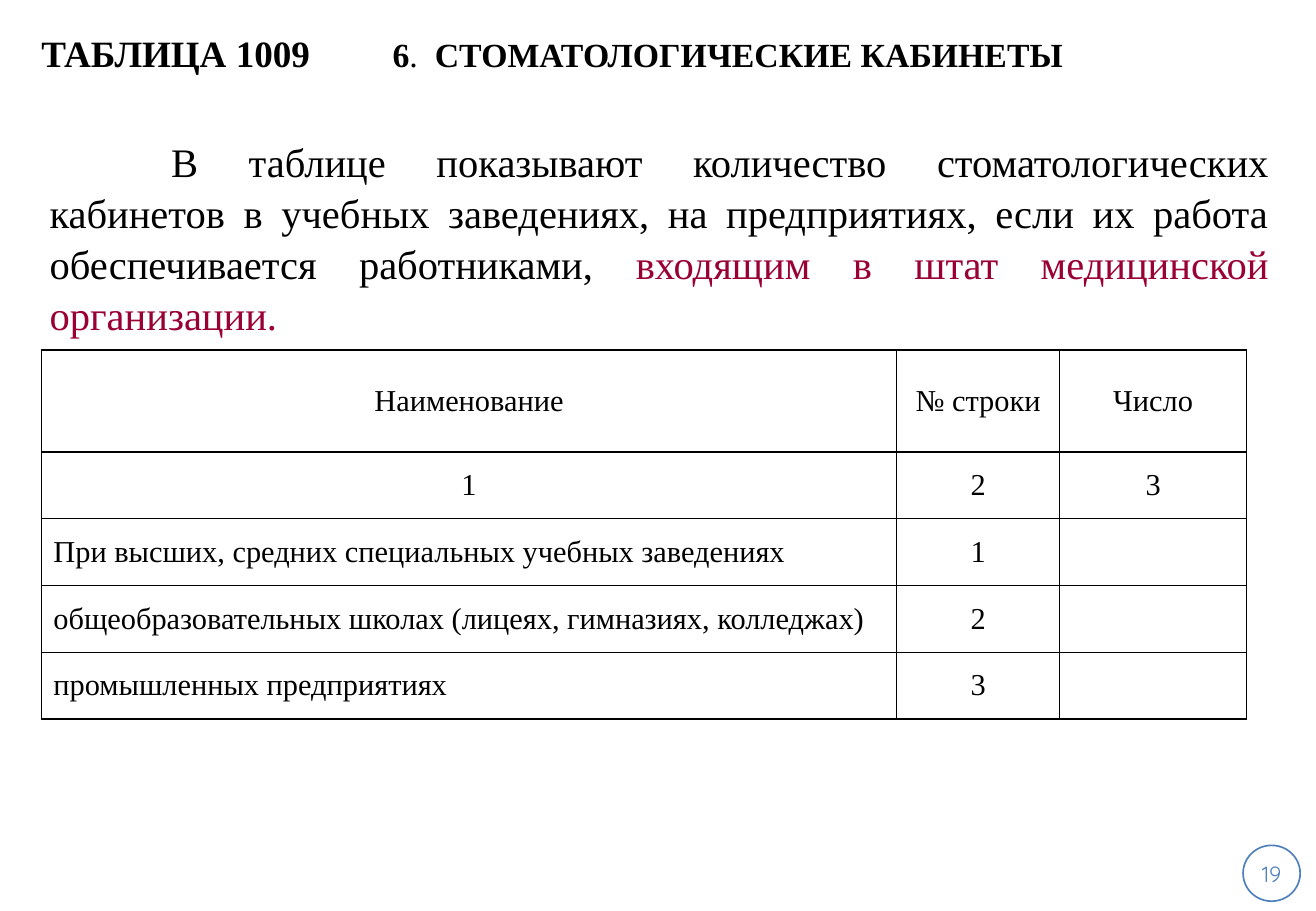
from dataclasses import dataclass

from lxml.etree import SubElement
from pptx import Presentation
from pptx.dml.color import RGBColor
from pptx.enum.shapes import MSO_SHAPE
from pptx.enum.text import MSO_ANCHOR, PP_ALIGN
from pptx.oxml.ns import qn
from pptx.util import Inches, Pt


@dataclass(frozen=True)
class Theme:
    font: str = "Times New Roman"
    number_font: str = "Quicksand"
    ink: RGBColor = RGBColor(0, 0, 0)
    accent: RGBColor = RGBColor(0x99, 0x00, 0x33)
    blue: RGBColor = RGBColor(0x4F, 0x81, 0xBD)
    title: Pt = Pt(22)
    subtitle: Pt = Pt(20)
    body: Pt = Pt(24)
    cell: Pt = Pt(18)
    number: Pt = Pt(13)
    line: Pt = Pt(1)


THEME = Theme()

COLUMNS = [7.04, 1.34, 1.54]
ROWS = [0.84, 0.55, 0.55, 0.55, 0.55]
CELLS = [
    ["Наименование", "№ строки", "Число"],
    ["1", "2", "3"],
    ["При высших, средних специальных учебных заведениях", "1", ""],
    ["общеобразовательных школах (лицеях, гимназиях, колледжах)", "2", ""],
    ["промышленных предприятиях", "3", ""],
]


def style(p, size, color=THEME.ink, name=THEME.font):
    p.font.name = name
    p.font.size = size
    p.font.color.rgb = color


def add_run(p, text):
    r = p.add_run()
    r.text = text
    return r


def add_text_box(slide, box):
    tf = slide.shapes.add_textbox(*map(Inches, box)).text_frame
    tf.word_wrap = True
    return tf


def add_title(slide, box):
    tf = add_text_box(slide, box)
    tf.margin_left = 0
    tf.vertical_anchor = MSO_ANCHOR.MIDDLE
    p = tf.paragraphs[0]
    # Tab stop separating the table number from the section name
    tabs = SubElement(p._p.get_or_add_pPr(), qn("a:tabLst"))
    SubElement(tabs, qn("a:tab"), pos=str(Inches(2.89)), algn="l")
    style(p, THEME.title)
    for text, size, bold in [
        ("ТАБЛИЦА 1009\t", THEME.title, True),
        ("6", THEME.subtitle, True),
        (".  ", THEME.subtitle, False),
        ("СТОМАТОЛОГИЧЕСКИЕ КАБИНЕТЫ", THEME.subtitle, True),
    ]:
        r = add_run(p, text)
        r.font.size = size
        r.font.bold = bold


def add_explanation(slide, box):
    p = add_text_box(slide, box).paragraphs[0]
    p.alignment = PP_ALIGN.JUSTIFY
    p.line_spacing = 1.05
    p._p.get_or_add_pPr().set("indent", str(Inches(1)))
    style(p, THEME.body)
    add_run(p, "В таблице показывают количество стоматологических кабинетов "
               "в учебных заведениях, на предприятиях, если их работа "
               "обеспечивается работниками, ")
    r = add_run(p, "входящим в штат медицинской организации.")
    r.font.color.rgb = THEME.accent


def add_borders(cell):
    tcPr = cell._tc.get_or_add_tcPr()
    for side in ("lnL", "lnR", "lnT", "lnB"):
        ln = SubElement(tcPr, qn(f"a:{side}"), w=str(THEME.line))
        fill = SubElement(ln, qn("a:solidFill"))
        SubElement(fill, qn("a:srgbClr"), val=str(THEME.ink))


def add_offices_table(slide, box):
    table = slide.shapes.add_table(len(ROWS), len(COLUMNS), *map(Inches, box)).table
    table.first_row = table.horz_banding = False
    for column, width in zip(table.columns, COLUMNS):
        column.width = Inches(width)
    for i, (row, height) in enumerate(zip(table.rows, ROWS)):
        row.height = Inches(height)
        for j, cell in enumerate(row.cells):
            cell.text = CELLS[i][j]
            cell.vertical_anchor = MSO_ANCHOR.MIDDLE
            p = cell.text_frame.paragraphs[0]
            # Only the names below the two header rows are left-aligned
            p.alignment = PP_ALIGN.LEFT if i > 1 and j == 0 else PP_ALIGN.CENTER
            style(p, THEME.cell)
            add_borders(cell)
            cell.fill.background()


def add_page_number(slide, box, number):
    s = slide.shapes.add_shape(MSO_SHAPE.OVAL, *map(Inches, box))
    s.shadow.inherit = False
    s.fill.background()
    s.line.color.rgb = THEME.blue
    s.line.width = THEME.line
    tf = s.text_frame
    tf.margin_left = tf.margin_right = tf.margin_top = tf.margin_bottom = 0
    tf.vertical_anchor = MSO_ANCHOR.MIDDLE
    p = tf.paragraphs[0]
    p.alignment = PP_ALIGN.CENTER
    add_run(p, number)
    style(p, THEME.number, THEME.blue, THEME.number_font)


def main():
    prs = Presentation()
    prs.slide_width, prs.slide_height = Inches(10.83), Inches(7.5)
    slide = prs.slides.add_slide(prs.slide_layouts[6])
    add_page_number(slide, (10.23, 6.96, 0.47, 0.46), "19")
    add_title(slide, (0.34, 0, 10.28, 0.86))
    add_explanation(slide, (0.31, 1.06, 10.23, 1.72))
    add_offices_table(slide, (0.34, 2.88, sum(COLUMNS), sum(ROWS)))
    prs.save("out.pptx")


if __name__ == "__main__":
    main()
